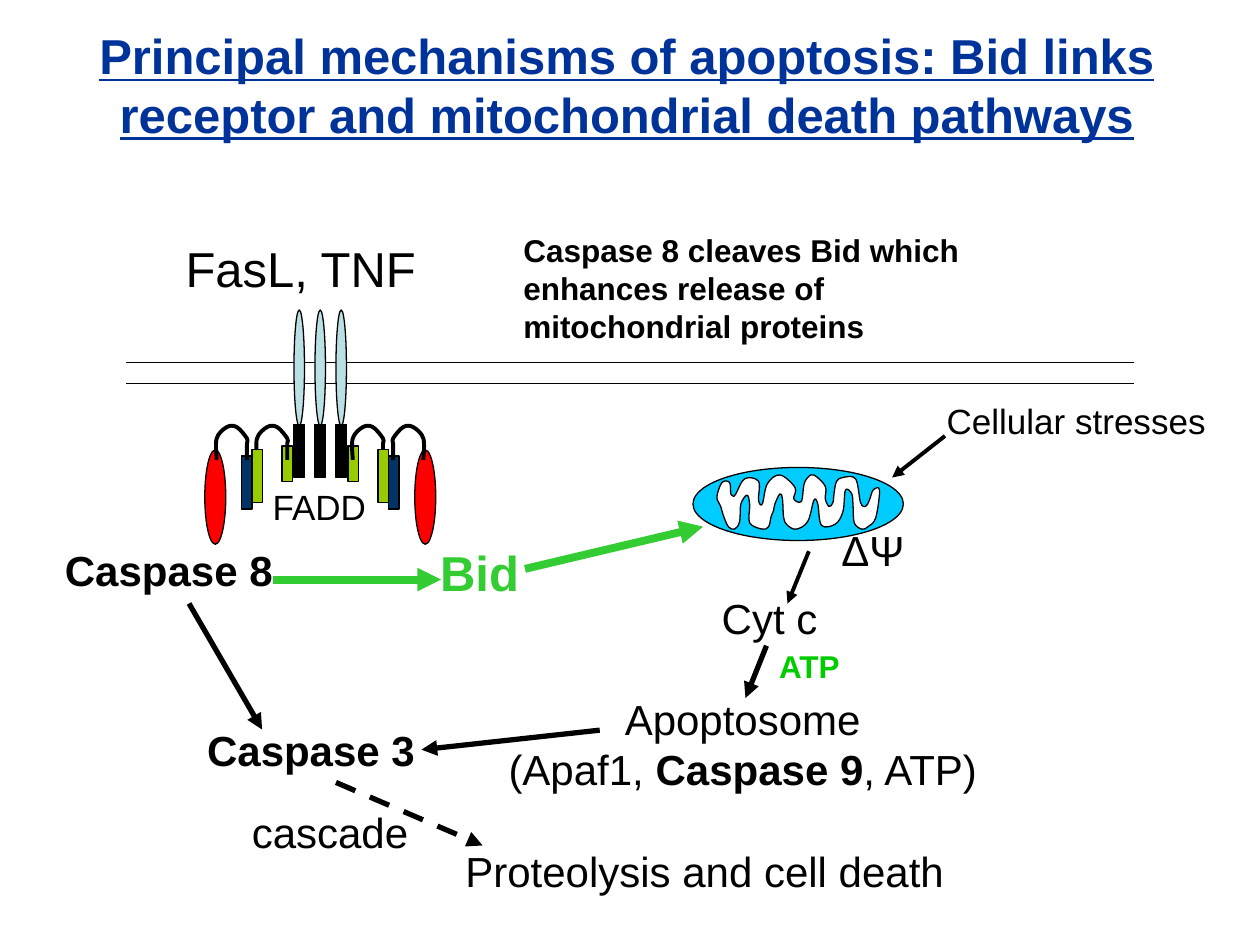
from dataclasses import dataclass

from lxml import etree
from pptx import Presentation
from pptx import util as u
from pptx.dml.color import RGBColor
from pptx.enum import dml, shapes, text
from pptx.oxml.ns import qn

COLUMNS, ROWS = 1000, 750
CELL = u.Inches(10) // COLUMNS
FONT = "Arial"
BLACK = RGBColor(0x00, 0x00, 0x00)
WHITE = RGBColor(0xFF, 0xFF, 0xFF)
TITLE_BLUE = RGBColor(0x00, 0x33, 0x99)
CYAN = RGBColor(0x00, 0xCC, 0xFF)
PALE_TEAL = RGBColor(0xBB, 0xE0, 0xE3)
LIME = RGBColor(0x99, 0xCC, 0x00)
NAVY = RGBColor(0x00, 0x33, 0x66)
RED = RGBColor(0xFF, 0x00, 0x00)
BID_GREEN = RGBColor(0x33, 0xCC, 0x33)
ATP_GREEN = RGBColor(0x00, 0xCC, 0x00)
OVAL = shapes.MSO_SHAPE.OVAL
BAR = shapes.MSO_SHAPE.RECTANGLE

Point = tuple[float, float]


@dataclass
class Part:
    kind: shapes.MSO_SHAPE
    left: float
    top: float
    width: float
    height: float
    fill: RGBColor


@dataclass
class Line:
    start: Point
    end: Point
    weight: float = 3
    color: RGBColor = BLACK
    arrow: bool = True
    dashed: bool = False


@dataclass
class Span:
    words: str
    bold: bool = False


@dataclass
class Label:
    left: float
    top: float
    width: float
    height: float
    size: int
    lines: list[list[Span]]
    color: RGBColor = BLACK
    centred: bool = False
    wrap: bool = False
    title: bool = False


BAR_WIDTH = 8.33
CENTRE = 254.17
RECEPTORS = [CENTRE - BAR_WIDTH / 2 + 2 * BAR_WIDTH * step for step in (-1, 0, 1)]
ARCH = [(1, 28), (1, 11), (9, 2), (17, 2), (25, 11), (25, 15), (25, 28)]
ARCH_WIDTH, ARCH_TOP = 26, 337
INNER_ARM = Part(BAR, 223.8, 354, BAR_WIDTH, 28, LIME)
OUTER_ARM = Part(BAR, 200, 357, BAR_WIDTH, 42, LIME)
ADAPTOR = Part(BAR, 191.67, 362, BAR_WIDTH, 42, NAVY)
CASPASE = Part(OVAL, 162.5, 357, 2 * BAR_WIDTH, 75, RED)
MITOCHONDRION = Part(OVAL, 550, 371, 167, 58, CYAN)

CRISTAE = [
    (572, 402), (571, 400), (569, 394), (573, 383), (579, 383), (580, 392), (581, 393),
    (582, 394), (584, 392), (591, 380), (602, 382), (602, 397), (605, 400), (609, 384),
    (619, 377), (631, 387), (630, 396), (636, 398), (638, 385), (641, 379), (646, 377),
    (655, 386), (655, 396), (658, 402), (661, 399), (662, 391), (664, 382), (669, 379),
    (679, 380), (683, 399), (687, 402), (690, 397), (693, 389), (698, 389), (695, 411),
    (689, 418), (684, 420), (678, 415), (677, 401), (676, 392), (671, 389), (669, 406),
    (663, 416), (652, 417), (649, 400), (646, 397), (641, 414), (632, 420), (625, 417),
    (622, 411), (621, 396), (619, 392), (615, 400), (614, 405), (612, 410), (610, 418),
    (605, 420), (595, 415), (595, 401), (593, 393), (588, 400), (587, 414), (583, 420),
    (578, 418), (574, 409),
]

MEMBRANE = [Line((100, row), (900, row), 0.75, arrow=False) for row in (287.5, 304.17)]
ARROWS = [
    Line((150, 479), (208, 579)),
    Line((750, 346), (708, 379), 2.25),
    Line((642, 437.5), (625, 479), 2.25),
    Line((608.33, 512.5), (591.67, 554)),
    Line((476, 579.5), (334.5, 595)),
    Line((266.67, 621), (383, 671), dashed=True),
    Line((216.67, 460), (350, 460), 4.5, BID_GREEN),
    Line((416.67, 451.5), (558, 418), 4.5, BID_GREEN),
]

LABELS = [
    Label(19.5, 4.5, 956, 125, 28,
          [[Span("Principal mechanisms of apoptosis: Bid links receptor and "
                 "mitochondrial death pathways", True)]],
          TITLE_BLUE, centred=True, wrap=True, title=True),
    Label(137.5, 184, 204, 57, 28, [[Span("FasL, TNF")]]),
    Label(206.5, 380.5, 96, 43, 20, [[Span("FADD")]]),
    Label(41.67, 427, 185, 50, 24, [[Span("Caspase 8", True)]]),
    Label(154.5, 570, 185, 50, 24, [[Span("Caspase 3", True)]]),
    Label(741.5, 312, 226, 43, 20, [[Span("Cellular stresses")]]),
    Label(563, 465, 96, 50, 24, [[Span("Cyt c")]]),
    Label(391.5, 545.5, 396, 90, 24,
          [[Span("Apoptosome")],
           [Span("(Apaf1, "), Span("Caspase 9", True), Span(", ATP)")]], centred=True),
    Label(359.5, 666, 400, 50, 24, [[Span("Proteolysis and cell death")]]),
    Label(658, 411.5, 70, 50, 24, [[Span("ΔΨ")]]),
    Label(339.5, 425.5, 83, 57, 28, [[Span("Bid", True)]], BID_GREEN),
    Label(405.5, 178.5, 384, 100, 18,
          [[Span("Caspase 8 cleaves Bid which enhances release of "
                 "mitochondrial proteins", True)]], wrap=True),
    Label(190, 635, 144, 50, 24, [[Span("cascade")]]),
    Label(608.5, 508.5, 70, 40, 18, [[Span("ATP", True)]], ATP_GREEN),
]


def cells(*values: float) -> list[int]:
    return [round(value * CELL) for value in values]


def draw_part(page, part: Part) -> None:
    shape = page.shapes.add_shape(
        part.kind, *cells(part.left, part.top, part.width, part.height))
    shape.shadow.inherit = False
    shape.fill.solid()
    shape.fill.fore_color.rgb = part.fill
    shape.line.color.rgb = BLACK
    shape.line.width = u.Pt(0.75)


def mirrored(part: Part) -> Part:
    return Part(part.kind, 2 * CENTRE - part.left - part.width, part.top,
                part.width, part.height, part.fill)


def bend_segments(shape, points: list[list[int]]) -> None:
    padded = [points[0], *points, points[-1]]
    segments = list(shape._element.iter(qn("a:lnTo")))
    for segment, before, start, end, after in zip(
            segments, padded, padded[1:], padded[2:], padded[3:]):
        leave = [b + (c - a) / 6 for a, b, c in zip(before, start, end)]
        arrive = [c - (d - b) / 6 for b, c, d in zip(start, end, after)]
        segment.tag = qn("a:cubicBezTo")
        for index, (x, y) in enumerate((leave, arrive)):
            handle = segment.makeelement(
                qn("a:pt"), x=str(round(x - shape.left)), y=str(round(y - shape.top)))
            segment.insert(index, handle)


def draw_curve(page, outline: list[Point], weight: float, closed: bool) -> None:
    points = [cells(*point) for point in outline]
    builder = page.shapes.build_freeform(*points[0], scale=1.0)
    builder.add_line_segments(points[1:], close=closed)
    shape = builder.convert_to_shape()
    bend_segments(shape, points)
    shape.shadow.inherit = False
    if closed:
        shape.fill.solid()
        shape.fill.fore_color.rgb = WHITE
    else:
        shape.fill.background()
    shape.line.color.rgb = BLACK
    shape.line.width = u.Pt(weight)


def draw_arch(page, left: float, flipped: bool = False) -> None:
    points = [(left + (ARCH_WIDTH - x if flipped else x), ARCH_TOP + y) for x, y in ARCH]
    draw_curve(page, points, 2.25, closed=False)


def draw_line(page, line: Line) -> None:
    connector = page.shapes.add_connector(
        shapes.MSO_CONNECTOR.STRAIGHT, *cells(*line.start, *line.end))
    connector.line.color.rgb = line.color
    connector.line.width = u.Pt(line.weight)
    if line.dashed:
        connector.line.dash_style = dml.MSO_LINE.DASH
    if line.arrow:
        etree.SubElement(connector.line._get_or_add_ln(), qn("a:tailEnd"), type="triangle")
    etree.SubElement(connector._element.spPr, qn("a:effectLst"))


def draw_label(page, label: Label) -> None:
    box = page.shapes.add_textbox(*cells(label.left, label.top, label.width, label.height))
    frame = box.text_frame
    frame.word_wrap = label.wrap
    if label.title:
        frame.vertical_anchor = text.MSO_ANCHOR.MIDDLE
    else:
        frame.auto_size = text.MSO_AUTO_SIZE.SHAPE_TO_FIT_TEXT
    for index, spans in enumerate(label.lines):
        para = frame.add_paragraph() if index else frame.paragraphs[0]
        para.alignment = text.PP_ALIGN.CENTER if label.centred else text.PP_ALIGN.LEFT
        for span in spans:
            run = para.add_run()
            run.text = span.words
            run.font.name = FONT
            run.font.size = u.Pt(label.size)
            run.font.bold = span.bold
            run.font.underline = label.title
            run.font.color.rgb = label.color


def draw_receptor_complex(page) -> None:
    for left in RECEPTORS:
        draw_part(page, Part(OVAL, left, 246, BAR_WIDTH, 92, PALE_TEAL))
        draw_part(page, Part(BAR, left, 337, BAR_WIDTH, 42, BLACK))
    for part in (INNER_ARM, mirrored(INNER_ARM)):
        draw_part(page, part)
    for left in (203, 279):
        draw_arch(page, left)
    for part in (OUTER_ARM, ADAPTOR, CASPASE):
        draw_part(page, part)
        draw_part(page, mirrored(part))
    draw_arch(page, 171)
    draw_arch(page, 311, flipped=True)


def main() -> None:
    deck = Presentation()
    deck.slide_width, deck.slide_height = cells(COLUMNS, ROWS)
    page = deck.slides.add_slide(deck.slide_layouts[6])
    draw_part(page, MITOCHONDRION)
    draw_curve(page, CRISTAE, 0.75, closed=True)
    for line in MEMBRANE:
        draw_line(page, line)
    draw_receptor_complex(page)
    for line in ARROWS:
        draw_line(page, line)
    for label in LABELS:
        draw_label(page, label)
    deck.save("out.pptx")


if __name__ == "__main__":
    main()
